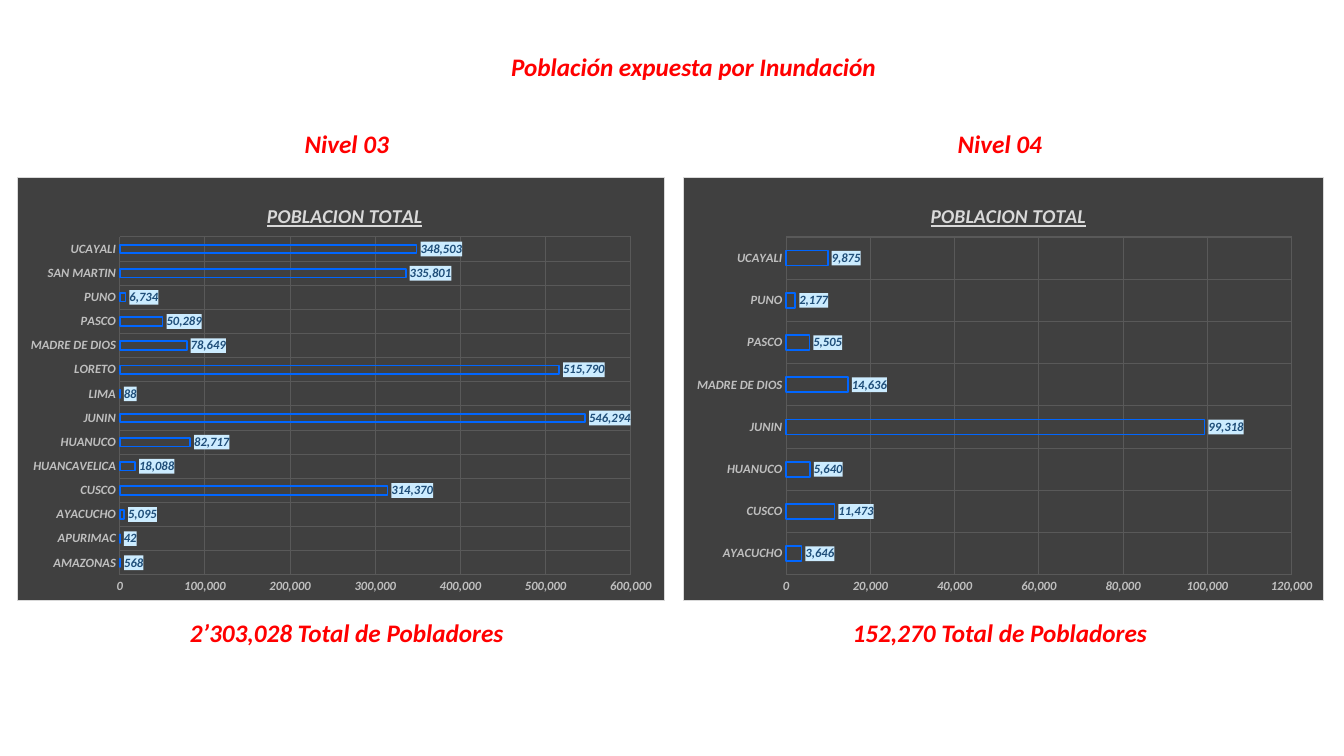
import dataclasses

import pptx
import pptx.chart.data
import pptx.dml.color
import pptx.enum.chart
import pptx.enum.text
import pptx.oxml
import pptx.oxml.ns
import pptx.util
from pptx.util import Cm


@dataclasses.dataclass(frozen=True)
class Theme:
    font: str = "Calibri"
    heading: str = "FF0000"
    panel: str = "404040"
    border: str = "D9D9D9"
    grid: str = "595959"
    axis: str = "BFBFBF"
    bar: str = "0066FF"
    label: str = "1F4E79"
    label_fill: str = "CCECFF"
    heading_size: int = 18
    title_size: int = 14
    chart_size: int = 10
    small_size: int = 9


THEME = Theme()


@dataclasses.dataclass(frozen=True)
class Panel:
    level: str
    total: str
    total_width: float
    left: float
    width: float
    centre: float
    population: dict


PANELS = [
    Panel("Nivel 03", "2’303,028 Total de Pobladores", 8.53, 0.43, 16.33, 8.74, {
        "AMAZONAS": 568, "APURIMAC": 42, "AYACUCHO": 5095, "CUSCO": 314370,
        "HUANCAVELICA": 18088, "HUANUCO": 82717, "JUNIN": 546294, "LIMA": 88,
        "LORETO": 515790, "MADRE DE DIOS": 78649, "PASCO": 50289,
        "PUNO": 6734, "SAN MARTIN": 335801, "UCAYALI": 348503}),
    Panel("Nivel 04", "152,270 Total de Pobladores", 8.08, 17.22, 16.15, 25.2, {
        "AYACUCHO": 3646, "CUSCO": 11473, "HUANUCO": 5640, "JUNIN": 99318,
        "MADRE DE DIOS": 14636, "PASCO": 5505, "PUNO": 2177, "UCAYALI": 9875}),
]


def rgb(colour):
    return pptx.dml.color.RGBColor.from_string(colour)


def style_font(font, size, colour, underline=None):
    font.name, font.size = THEME.font, pptx.util.Pt(size)
    font.bold = font.italic = True
    font.underline = underline
    font.color.rgb = rgb(colour)


def write(frame, text, *, size, colour, underline=None):
    para = frame.paragraphs[0]
    para.alignment = pptx.enum.text.PP_ALIGN.CENTER
    span = para.add_run()
    span.text = text
    style_font(span.font, size, colour, underline)


def add_heading(page, text, centre, top, width, wrap=True):
    box = page.shapes.add_textbox(Cm(centre - width / 2), Cm(top), Cm(width), Cm(1.02))
    box.text_frame.word_wrap = wrap
    write(box.text_frame, text, size=THEME.heading_size, colour=THEME.heading)


def chart_xml(body):
    return pptx.oxml.parse_xml(body.replace(
        ">", f" {pptx.oxml.ns.nsdecls('c', 'a')}>", 1))


def fill_behind(text_properties, fill, border=None):
    """Give the chart part that owns these text properties a fill and outline."""
    line = (f'<a:ln w="9525"><a:solidFill><a:srgbClr val="{border}"/></a:solidFill></a:ln>'
            if border else "<a:ln><a:noFill/></a:ln>")
    text_properties.addprevious(chart_xml(
        f'<c:spPr><a:solidFill><a:srgbClr val="{fill}"/></a:solidFill>{line}</c:spPr>'))


def place(part, target, **fractions):
    """Fix a chart title or plot area at fractions of the chart."""
    for old in part.findall(pptx.oxml.ns.qn("c:layout")):
        part.remove(old)
    modes = "".join(f'<c:{axis}Mode val="edge"/>' for axis in "xy")
    sizes = "".join(f'<c:{key} val="{value}"/>' for key, value in fractions.items())
    inner = f'<c:layoutTarget val="{target}"/>' if target else ""
    layout = chart_xml(
        f"<c:layout><c:manualLayout>{inner}{modes}{sizes}</c:manualLayout></c:layout>")
    part.insert(0 if target else 1, layout)


def style_axis(axis):
    none = pptx.enum.chart.XL_TICK_MARK.NONE
    axis.major_tick_mark = axis.minor_tick_mark = none
    axis.format.line.fill.background()
    axis.has_major_gridlines = True
    grid = axis.major_gridlines.format.line
    grid.width, grid.color.rgb = pptx.util.Pt(0.75), rgb(THEME.grid)
    style_font(axis.tick_labels.font, THEME.small_size, THEME.axis)


def add_bars(page, panel):
    data = pptx.chart.data.CategoryChartData(number_format="#,##0")
    data.categories = list(panel.population)
    data.add_series("Series 1", list(panel.population.values()))
    chart = page.shapes.add_chart(
        pptx.enum.chart.XL_CHART_TYPE.BAR_CLUSTERED, Cm(panel.left), Cm(4.47),
        Cm(panel.width), Cm(10.67), data).chart
    chart.has_legend = False
    chart.font.name, chart.font.size = THEME.font, pptx.util.Pt(THEME.chart_size)
    fill_behind(chart.element.xpath("./c:txPr")[0], THEME.panel, THEME.border)

    # Title and axes
    chart.has_title = True
    write(chart.chart_title.text_frame, "POBLACION TOTAL", size=THEME.title_size,
          colour=THEME.border, underline=True)
    chart.chart_title.include_in_layout = False
    for axis in (chart.category_axis, chart.value_axis):
        style_axis(axis)
    ticks = chart.value_axis.tick_labels
    ticks.number_format, ticks.number_format_is_linked = "#,##0", False

    # Hollow bars
    plot = chart.plots[0]
    plot.gap_width, plot.overlap, plot.vary_by_categories = 182, -50, False
    bars = plot.series[0]
    bars.format.fill.background()
    bars.format.line.width = pptx.util.Pt(1.25)
    bars.format.line.color.rgb = rgb(THEME.bar)

    # Value labels
    labels = bars.data_labels
    labels.show_value = True
    labels.number_format, labels.number_format_is_linked = "#,##0", False
    labels.position = pptx.enum.chart.XL_LABEL_POSITION.OUTSIDE_END
    style_font(labels.font, THEME.small_size, THEME.label)
    fill_behind(chart.element.xpath(".//c:ser/c:dLbls/c:txPr")[0], THEME.label_fill)

    # Fixed places inside the chart
    place(chart.element.xpath(".//c:chart/c:title")[0], None, x=0.38, y=0.05)
    place(chart.element.xpath(".//c:plotArea")[0], "inner",
          x=round(2.58 / panel.width, 3), y=0.14, w=0.79, h=0.8)


def main():
    deck = pptx.Presentation()
    deck.slide_width, deck.slide_height = Cm(33.87), Cm(19.05)
    page = deck.slides.add_slide(deck.slide_layouts[6])
    add_heading(page, "Población expuesta por Inundación", 17.48, 1.17, 9.8, wrap=False)
    for panel in PANELS:
        add_heading(page, panel.level, panel.centre, 3.12, 2.74)
        add_bars(page, panel)
        add_heading(page, panel.total, panel.centre, 15.44, panel.total_width)
    deck.save("out.pptx")


if __name__ == "__main__":
    main()
